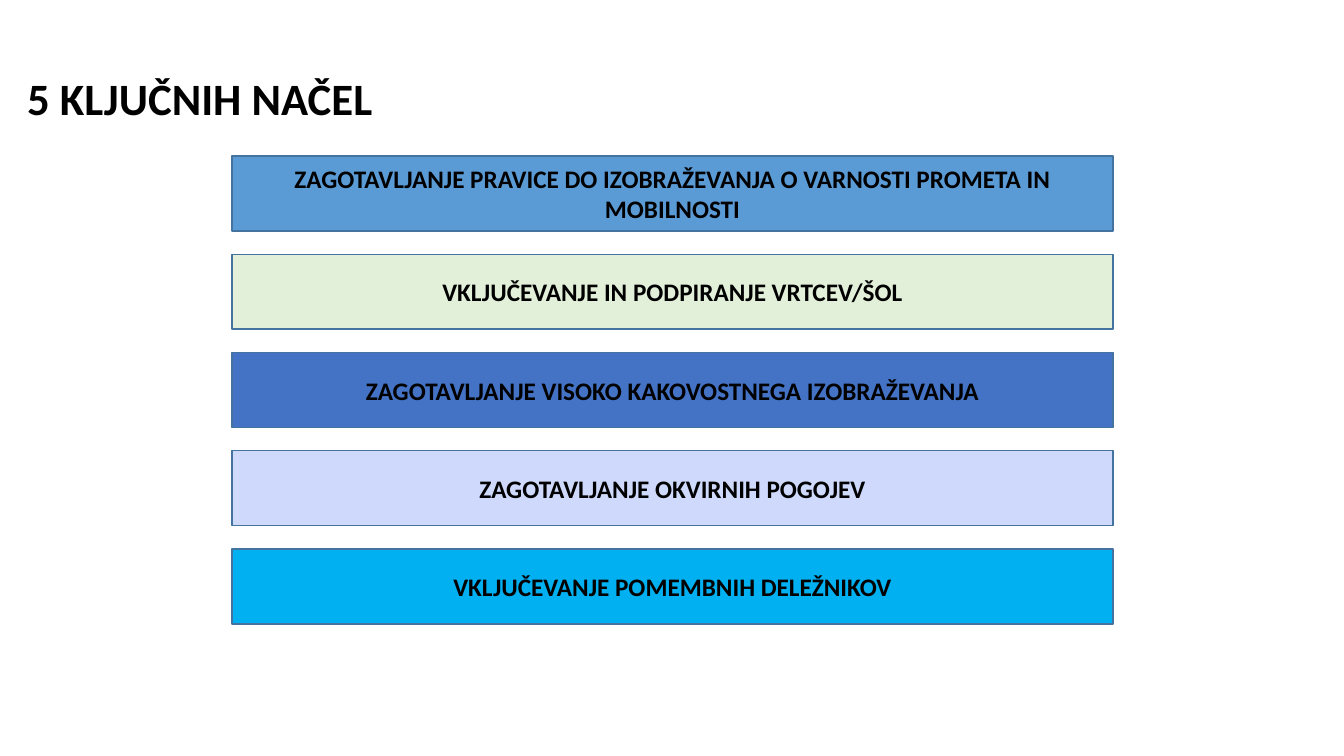
from dataclasses import dataclass

from pptx import Presentation
from pptx.dml.color import RGBColor
from pptx.enum.shapes import MSO_SHAPE
from pptx.enum.text import MSO_ANCHOR, MSO_AUTO_SIZE, PP_ALIGN
from pptx.util import Pt

TITLE = "5 KLJUČNIH NAČEL"
PRINCIPLES = [
    ("ZAGOTAVLJANJE PRAVICE DO IZOBRAŽEVANJA O VARNOSTI PROMETA IN MOBILNOSTI", "5B9BD5"),
    ("VKLJUČEVANJE IN PODPIRANJE VRTCEV/ŠOL", "E2F0D9"),
    ("ZAGOTAVLJANJE VISOKO KAKOVOSTNEGA IZOBRAŽEVANJA", "4472C4"),
    ("ZAGOTAVLJANJE OKVIRNIH POGOJEV", "CFD9FB"),
    ("VKLJUČEVANJE POMEMBNIH DELEŽNIKOV", "00B0F0"),
]


@dataclass(frozen=True)
class Theme:
    font: str = "Calibri"
    text: str = "000000"
    outline: str = "43739E"
    title_size: int = 32
    bar_size: int = 18
    outline_width: int = 1


THEME = Theme()
SLIDE_WIDTH, SLIDE_HEIGHT = 1344, 756
TITLE_BOX = (17, 17, 1309, 113)
BAR_LEFT, BAR_WIDTH, BAR_HEIGHT = 232, 881, 75
FIRST_TOP, LAST_TOP = 156, 549
EMU_PER_PX = 12192000 / SLIDE_WIDTH


def px(length):
    return round(length * EMU_PER_PX)


def write_text(shape, text, size, alignment, anchor):
    frame = shape.text_frame
    frame.text = text
    frame.word_wrap = True
    frame.auto_size = MSO_AUTO_SIZE.NONE
    frame.vertical_anchor = anchor
    paragraph = frame.paragraphs[0]
    paragraph.alignment = alignment
    font = paragraph.runs[0].font
    font.name = THEME.font
    font.size = Pt(size)
    font.bold = True
    font.color.rgb = RGBColor.from_string(THEME.text)
    return paragraph


def add_title(slide):
    title = slide.shapes.title
    title.left, title.top, title.width, title.height = map(px, TITLE_BOX)
    paragraph = write_text(title, TITLE, THEME.title_size, PP_ALIGN.LEFT, MSO_ANCHOR.BOTTOM)
    paragraph.line_spacing = 0.9


def add_bar(slide, top, text, color):
    box = map(px, (BAR_LEFT, top, BAR_WIDTH, BAR_HEIGHT))
    bar = slide.shapes.add_shape(MSO_SHAPE.RECTANGLE, *box)
    bar.shadow.inherit = False
    bar.fill.solid()
    bar.fill.fore_color.rgb = RGBColor.from_string(color)
    bar.line.color.rgb = RGBColor.from_string(THEME.outline)
    bar.line.width = Pt(THEME.outline_width)
    write_text(bar, text, THEME.bar_size, PP_ALIGN.CENTER, MSO_ANCHOR.MIDDLE)


def main():
    presentation = Presentation()
    presentation.slide_width = px(SLIDE_WIDTH)
    presentation.slide_height = px(SLIDE_HEIGHT)
    slide = presentation.slides.add_slide(presentation.slide_layouts.get_by_name("Title Only"))
    add_title(slide)
    pitch = (LAST_TOP - FIRST_TOP) / (len(PRINCIPLES) - 1)
    for index, (text, color) in enumerate(PRINCIPLES):
        add_bar(slide, FIRST_TOP + index * pitch, text, color)
    presentation.save("out.pptx")


if __name__ == "__main__":
    main()
